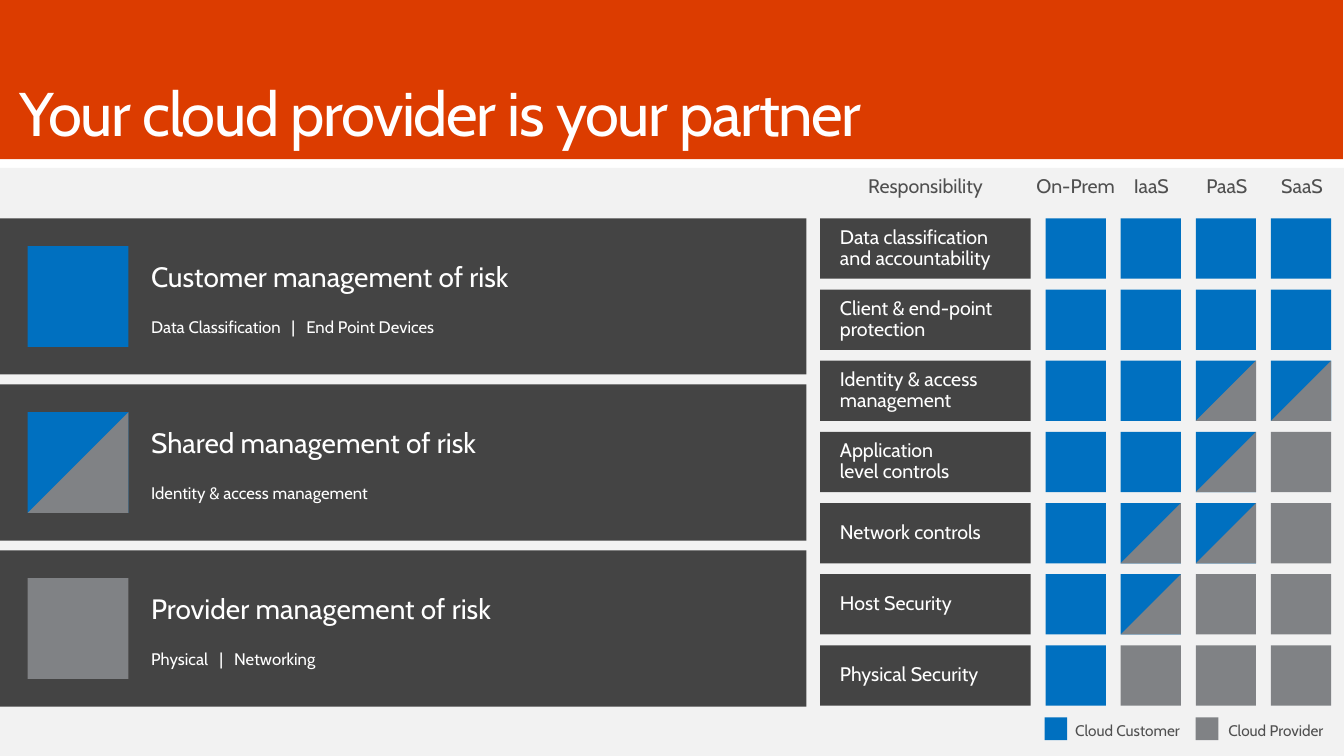
import pptx
import pptx.util
import pptx.dml.color
import pptx.enum.shapes
import pptx.enum.text
import pptx.oxml

RGBColor = pptx.dml.color.RGBColor
RED = RGBColor(0xDC, 0x3C, 0x00)
PALE = RGBColor(0xF2, 0xF2, 0xF2)
DARK = RGBColor(0x44, 0x44, 0x44)
INK = RGBColor(0x50, 0x50, 0x50)
WHITE = RGBColor(0xFF, 0xFF, 0xFF)
BLUE = RGBColor(0x00, 0x70, 0xC0)
GREY = RGBColor(0x80, 0x82, 0x85)

SCALE = 9144  # EMU in one px
ALIGN = pptx.enum.text.PP_ALIGN
ANCHOR = pptx.enum.text.MSO_ANCHOR
RECT = pptx.enum.shapes.MSO_SHAPE.RECTANGLE

TOP, SIDE, STEP = 221, 61, 72
LEFT, PITCH = 1058, 76

HEADS = [("Responsibility", 854, 165), ("On-Prem", 1027, 123),
         ("IaaS", 1126, 78), ("PaaS", 1200, 83), ("SaaS", 1276, 83)]

# Who answers for each cell: C customer, S shared, P provider
ROWS = [
    (["Data classification", "and accountability"], "CCCC"),
    (["Client & end-point", "protection"], "CCCC"),
    (["Identity & access", "management"], "CCSS"),
    (["Application\vlevel controls"], "CCSP"),
    (["Network controls"], "CSSP"),
    (["Host Security"], "CSPP"),
    (["Physical Security"], "CPPP"),
]

RISKS = [
    ("C", "Customer management of risk",
     "Data Classification\t|\tEnd Point Devices", (142, 157)),
    ("S", "Shared management of risk", "Identity & access management", ()),
    ("P", "Provider management of risk", "Physical\t|\tNetworking", (69, 84)),
]

KEYS = [("Cloud Customer", "C", 1057, 1088), ("Cloud Provider", "P", 1210, 1243)]


def px(num):
    return pptx.util.Emu(num * SCALE)


def apply(item, form):
    for name, value in form.items():
        setattr(item, name, value)


def paint(shape, color):
    shape.shadow.inherit = False
    shape.fill.solid()
    shape.fill.fore_color.rgb = color
    shape.line.fill.background()


def box(slide, color, *place):
    shape = slide.shapes.add_shape(RECT, *map(px, place))
    paint(shape, color)
    return shape


def tile(slide, kind, left, top, side):
    """Square in the colour of its owner; a shared one is split corner to corner."""
    box(slide, GREY if kind == "P" else BLUE, left, top, side, side)
    if kind == "S":
        right, low = left + side, top + side
        path = slide.shapes.build_freeform(right, top, scale=SCALE)
        path.add_line_segments([(right, low), (left, low)], close=True)
        paint(path.convert_to_shape(), GREY)


def frame(shape, anchor, left=0, top=0, right=0, low=0):
    apply(shape.text_frame, {
        "word_wrap": True,
        "auto_size": pptx.enum.text.MSO_AUTO_SIZE.NONE,
        "vertical_anchor": anchor,
        "margin_left": px(left), "margin_top": px(top),
        "margin_right": px(right), "margin_bottom": px(low),
    })
    return shape.text_frame


def tabs(para, stops):
    if stops:
        space = pptx.oxml.ns.nsdecls("a")
        marks = "".join(f'<a:tab pos="{px(stop)}" algn="l"/>' for stop in stops)
        para._p.get_or_add_pPr().append(
            pptx.oxml.parse_xml(f"<a:tabLst {space}>{marks}</a:tabLst>"))


def style(para, text, size, color, align=ALIGN.LEFT, lead=0.9, gap=0, stops=()):
    para.text = text
    apply(para, {"alignment": align, "line_spacing": lead,
                 "space_before": pptx.util.Pt(gap)})
    tabs(para, stops)
    apply(para.font, {"name": "Cabin", "size": pptx.util.Pt(size)})
    para.font.color.rgb = color


def title(slide):
    shape = slide.shapes.title
    apply(shape, {"left": px(0), "top": px(0),
                  "width": px(1359), "height": px(161)})
    paint(shape, RED)
    para = frame(shape, ANCHOR.BOTTOM, 20, 10, 10, 10).paragraphs[0]
    style(para, "Your cloud provider is your partner", 44.9, WHITE,
          lead=pptx.util.Pt(53))
    para.runs[0].font._element.set("spc", "-100")


def label(slide, text, size, align, *place):
    shape = slide.shapes.add_textbox(*map(px, place))
    para = frame(shape, ANCHOR.TOP).paragraphs[0]
    style(para, text, size, INK, align)


def row(slide, num, lines, kinds):
    top = TOP + num * STEP
    text = frame(box(slide, DARK, 830, top, 213, SIDE), ANCHOR.MIDDLE, 20, 0, 20, 0)
    for pos, line in enumerate(lines):
        para = text.add_paragraph() if pos else text.paragraphs[0]
        style(para, line, 14.3, WHITE)
    for col, kind in enumerate(kinds):
        tile(slide, kind, LEFT + col * PITCH, top, SIDE)


def risk(slide, num, kind, head, note, stops):
    top = TOP + num * 168
    shape = box(slide, DARK, 0, top, 816, 158)
    text = frame(shape, ANCHOR.MIDDLE, 153, 16, 20, 16)
    style(text.paragraphs[0], head, 20.4, WHITE, lead=1.1)
    style(text.add_paragraph(), note, 12.2, WHITE, lead=1.1, gap=16, stops=stops)
    tile(slide, kind, 28, top + 28, 102)


def main():
    deck = pptx.Presentation()
    apply(deck, {"slide_width": px(1360), "slide_height": px(765)})
    slide = deck.slides.add_slide(deck.slide_layouts[5])
    title(slide)
    box(slide, PALE, 0, 170, 1360, 595)
    for text, left, width in HEADS:
        label(slide, text, 14.3, ALIGN.CENTER, left, 179, width, 23)
    for num, (lines, kinds) in enumerate(ROWS):
        row(slide, num, lines, kinds)
    for num, item in enumerate(RISKS):
        risk(slide, num, *item)
    for text, kind, left, start in KEYS:
        tile(slide, kind, left, 726, 23)
        label(slide, text, 11.2, ALIGN.LEFT, start, 732 - 10 + 10, 117, 18)
    deck.save("out.pptx")


if __name__ == "__main__":
    main()
